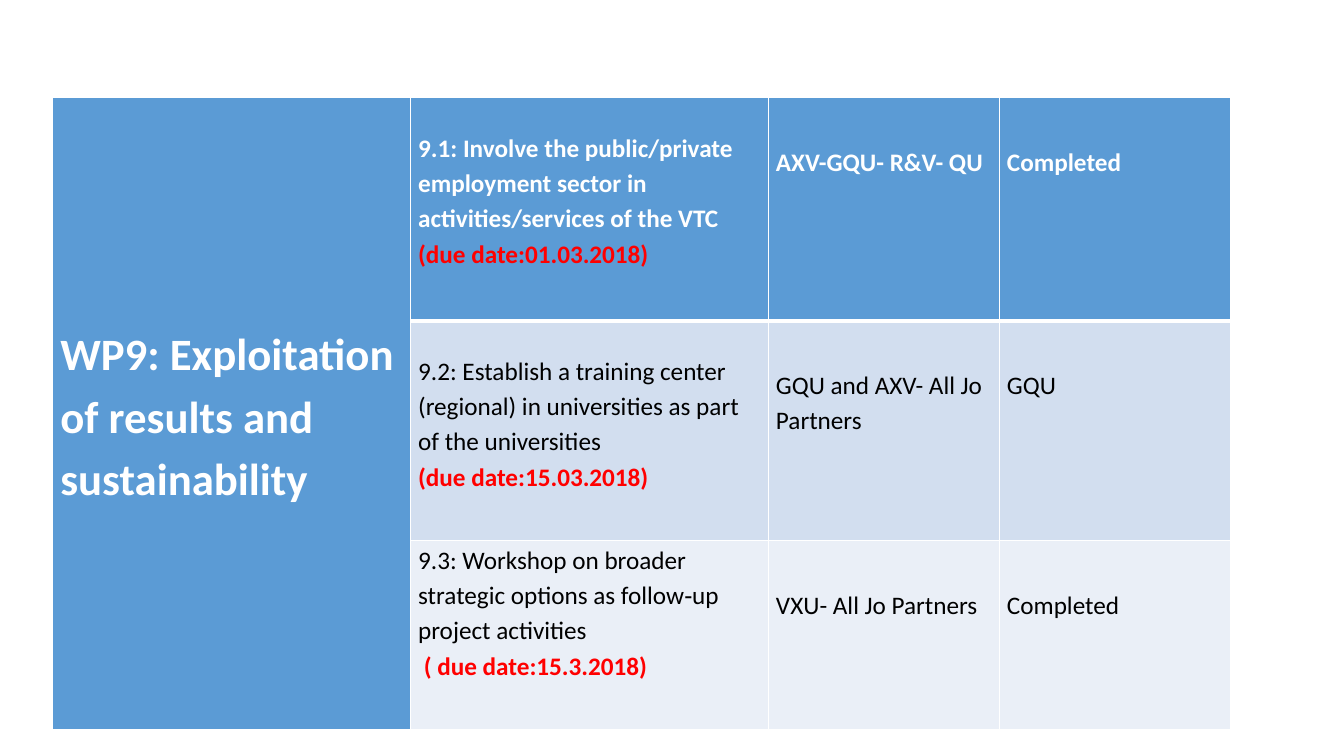
import pptx
import pptx.dml.color
import pptx.enum.text
import pptx.oxml
import pptx.oxml.ns
import pptx.util

Pt = pptx.util.Pt
RGBColor = pptx.dml.color.RGBColor

# Content
WORK_PACKAGE = "WP9: Exploitation of results and sustainability"
TASKS = [
    ("9.1: Involve the public/private employment sector in activities/services of the VTC",
     "(due date:01.03.2018)", "AXV-GQU- R&V- QU", "Completed"),
    ("9.2: Establish a training center (regional) in universities as part of the universities",
     "(due date:15.03.2018)", "GQU and AXV- All Jo Partners", "GQU"),
    ("9.3: Workshop on broader strategic options as follow‐up project activities",
     " ( due date:15.3.2018)", "VXU- All Jo Partners", "Completed"),
]

# Style
WHITE = RGBColor(0xFF, 0xFF, 0xFF)
BLACK = RGBColor(0, 0, 0)
RED = RGBColor(0xFF, 0, 0)
BLUE = RGBColor(0x5B, 0x9B, 0xD5)
ROW_FILLS = [BLUE, RGBColor(0xD2, 0xDE, 0xEF), RGBColor(0xEA, 0xEF, 0xF7)]
COLUMN_WIDTHS = [255.6, 255.6, 165, 165]
ROW_HEIGHTS = [159.3, 157, 106]
TASK_TOPS = [22, 22, 0]
PARTNER_TOP = 32


def draw_border(cell, side, width):
    cell._tc.get_or_add_tcPr().append(pptx.oxml.parse_xml(
        f'<a:{side} {pptx.oxml.ns.nsdecls("a")} w="{Pt(width)}">'
        f'<a:solidFill><a:srgbClr val="{WHITE}"/></a:solidFill></a:{side}>'))


def style_cell(cell, fill, bottom_width, top=0):
    for side, width in (("lnL", 1), ("lnR", 1), ("lnT", 1), ("lnB", bottom_width)):
        draw_border(cell, side, width)
    cell.fill.solid()
    cell.fill.fore_color.rgb = fill
    cell.margin_left = cell.margin_right = Pt(5.4)
    cell.margin_top, cell.margin_bottom = Pt(top), 0


def write_lines(cell, lines, size=18):
    frame = cell.text_frame
    for index, (text, color, bold) in enumerate(lines):
        paragraph = frame.add_paragraph() if index else frame.paragraphs[0]
        paragraph.line_spacing = 1.15
        run = paragraph.add_run()
        run.text = text
        run.font.name = "Calibri"
        run.font.size = Pt(size)
        run.font.bold = bold
        run.font.color.rgb = color


# Slide
deck = pptx.Presentation()
deck.slide_width, deck.slide_height = Pt(960), Pt(540)
slide = deck.slides.add_slide(deck.slide_layouts[6])

# Table grid
plan = slide.shapes.add_table(
    len(TASKS), len(COLUMN_WIDTHS), Pt(37.7), Pt(69.9),
    Pt(sum(COLUMN_WIDTHS)), Pt(sum(ROW_HEIGHTS))).table
for column, width in zip(plan.columns, COLUMN_WIDTHS):
    column.width = Pt(width)
for row, height in zip(plan.rows, ROW_HEIGHTS):
    row.height = Pt(height)

# Work package, merged down the first column
package_cell = plan.cell(0, 0)
package_cell.merge(plan.cell(len(TASKS) - 1, 0))
for row_index in range(len(TASKS)):
    style_cell(plan.cell(row_index, 0), BLUE, 1)
package_cell.vertical_anchor = pptx.enum.text.MSO_ANCHOR.MIDDLE
write_lines(package_cell, [(WORK_PACKAGE, WHITE, True)], 32)

# Tasks, partners and status
for row_index, (task, due, partners, status) in enumerate(TASKS):
    is_header = row_index == 0
    color = WHITE if is_header else BLACK
    columns = [
        ([(task, color, is_header), (due, RED, True)], TASK_TOPS[row_index]),
        ([(partners, color, is_header)], PARTNER_TOP),
        ([(status, color, is_header)], PARTNER_TOP),
    ]
    for column_index, (lines, top) in enumerate(columns, start=1):
        cell = plan.cell(row_index, column_index)
        style_cell(cell, ROW_FILLS[row_index], 3 if is_header else 1, top)
        write_lines(cell, lines)

deck.save("out.pptx")
